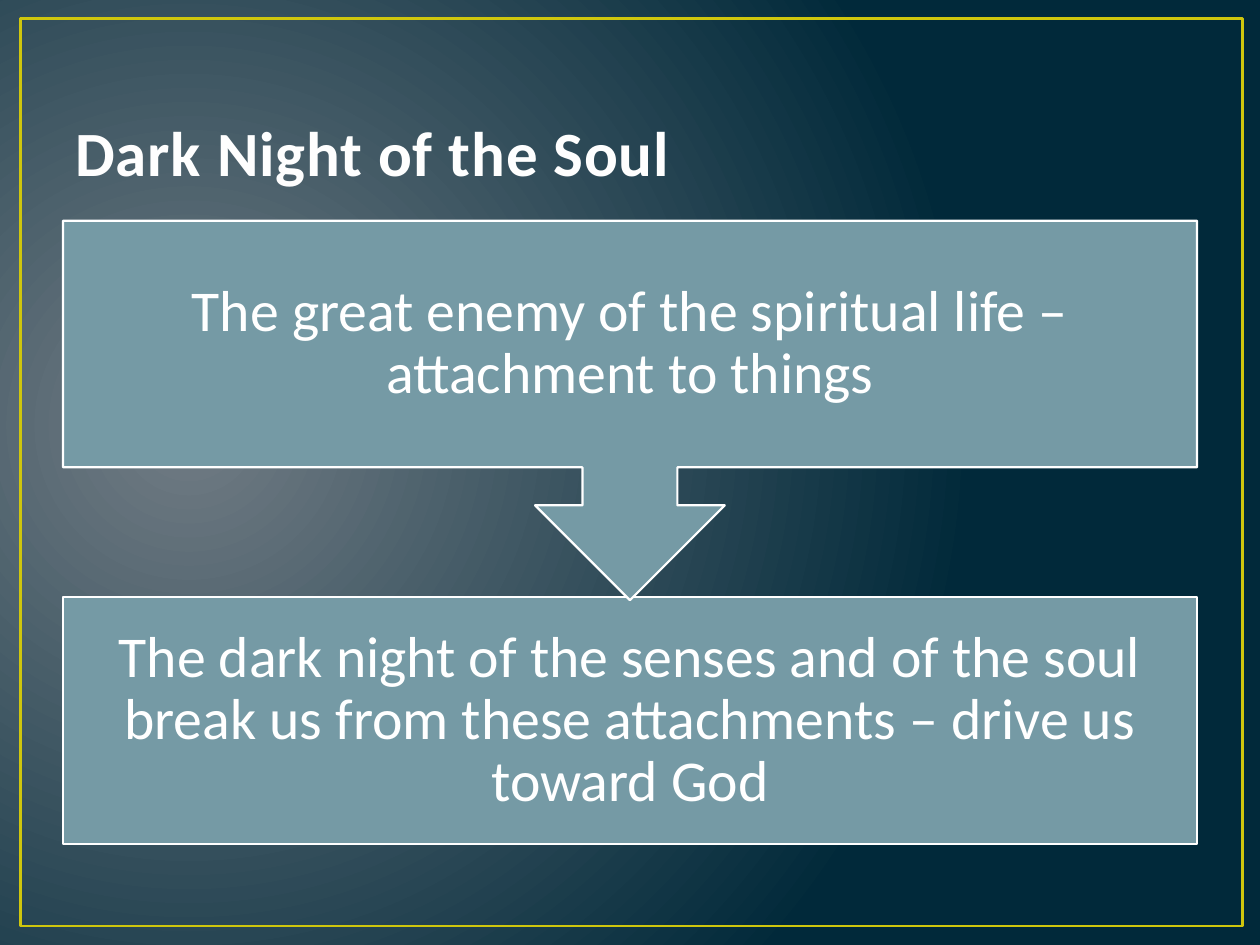
from lxml.etree import SubElement
from pptx import Presentation
from pptx.dml.color import RGBColor
from pptx.enum.shapes import MSO_SHAPE
from pptx.enum.text import MSO_ANCHOR, PP_ALIGN
from pptx.oxml.ns import qn
from pptx.util import Cm, Pt

FONT = "Calibri"
GLOW = RGBColor(0x71, 0x7C, 0x84)
NIGHT = RGBColor(0x01, 0x29, 0x3A)
GOLD = RGBColor(0xCF, 0xC6, 0x0D)
TEAL = RGBColor(0x75, 0x9A, 0xA5)
WHITE = RGBColor(0xFF, 0xFF, 0xFF)
TITLE_WHITE = RGBColor(0xFE, 0xFE, 0xFE)


def paint_background(slide):
    """Fill the slide with a round glow that fades into the night colour."""
    fill = slide.background.fill
    fill.gradient()
    for stop, color, position in zip(fill.gradient_stops, (GLOW, NIGHT), (0, 1)):
        stop.color.rgb = color
        stop.position = position
    gradient = slide.element.find(".//" + qn("a:gradFill"))
    gradient.remove(gradient.find(qn("a:lin")))
    circle = SubElement(gradient, qn("a:path"), path="circle")
    SubElement(circle, qn("a:fillToRect"), l="15000", t="50000", r="85000", b="60000")


def add_frame(slide, left, top, width, height):
    """Draw the thin gold border."""
    frame = slide.shapes.add_shape(MSO_SHAPE.RECTANGLE, left, top, width, height)
    frame.shadow.inherit = False
    frame.fill.background()
    frame.line.color.rgb = GOLD
    frame.line.width = Pt(1.5)


def add_title(slide, text, left, top, width, height):
    """Write the bold heading at the bottom of its box."""
    title = slide.shapes.add_textbox(left, top, width, height).text_frame
    title.word_wrap = True
    title.vertical_anchor = MSO_ANCHOR.BOTTOM
    heading = title.paragraphs[0]
    run = heading.add_run()
    run.text = text
    run.font._element.set("spc", "50")
    heading.font.name = FONT
    heading.font.size = Pt(36)
    heading.font.bold = True
    heading.font.color.rgb = TITLE_WHITE


def add_step(slide, preset, text, left, top, width, height):
    """Draw one step of the process with its centred statement."""
    step = slide.shapes.add_shape(preset, left, top, width, height)
    step.shadow.inherit = False
    step.fill.solid()
    step.fill.fore_color.rgb = TEAL
    step.line.color.rgb = WHITE
    step.line.width = Pt(1.25)
    frame = step.text_frame
    frame.word_wrap = True
    frame.vertical_anchor = MSO_ANCHOR.MIDDLE
    frame.margin_left = frame.margin_right = Cm(0.66)
    frame.margin_top = frame.margin_bottom = Cm(0.66)
    statement = frame.paragraphs[0]
    statement.text = text
    statement.alignment = PP_ALIGN.CENTER
    statement.line_spacing = 0.9
    statement.font.name = FONT
    statement.font.size = Pt(33)
    statement.font.color.rgb = WHITE
    return step


def add_process(slide, cause, remedy, left, top, width, height):
    """Stack the two steps, the upper one pointing down to the lower one."""
    step_height = Cm(4.98)
    callout_height = Cm(7.65)
    add_step(slide, MSO_SHAPE.RECTANGLE, remedy,
             left, top + height - step_height, width, step_height)
    callout = add_step(slide, MSO_SHAPE.DOWN_ARROW_CALLOUT, cause,
                       left, top, width, callout_height)
    for index, ratio in enumerate((0.25, 0.25, 0.25, 0.65)):
        callout.adjustments[index] = ratio


def main():
    """Build the slide and save it."""
    presentation = Presentation()
    presentation.slide_width = Cm(25.4)
    presentation.slide_height = Cm(19.05)
    slide = presentation.slides.add_slide(presentation.slide_layouts[6])
    margin, content_width = Cm(1.27), Cm(22.86)
    paint_background(slide)
    add_frame(slide, Cm(0.41), Cm(0.38), Cm(24.64), Cm(18.29))
    add_title(slide, "Dark Night of the Soul", margin, Cm(0.76), content_width, Cm(3.18))
    add_process(
        slide,
        "The great enemy of the spiritual life – attachment to things",
        "The dark night of the senses and of the soul break us from these "
        "attachments – drive us toward God",
        margin, Cm(4.45), content_width, Cm(12.57),
    )
    presentation.save("out.pptx")


if __name__ == "__main__":
    main()
